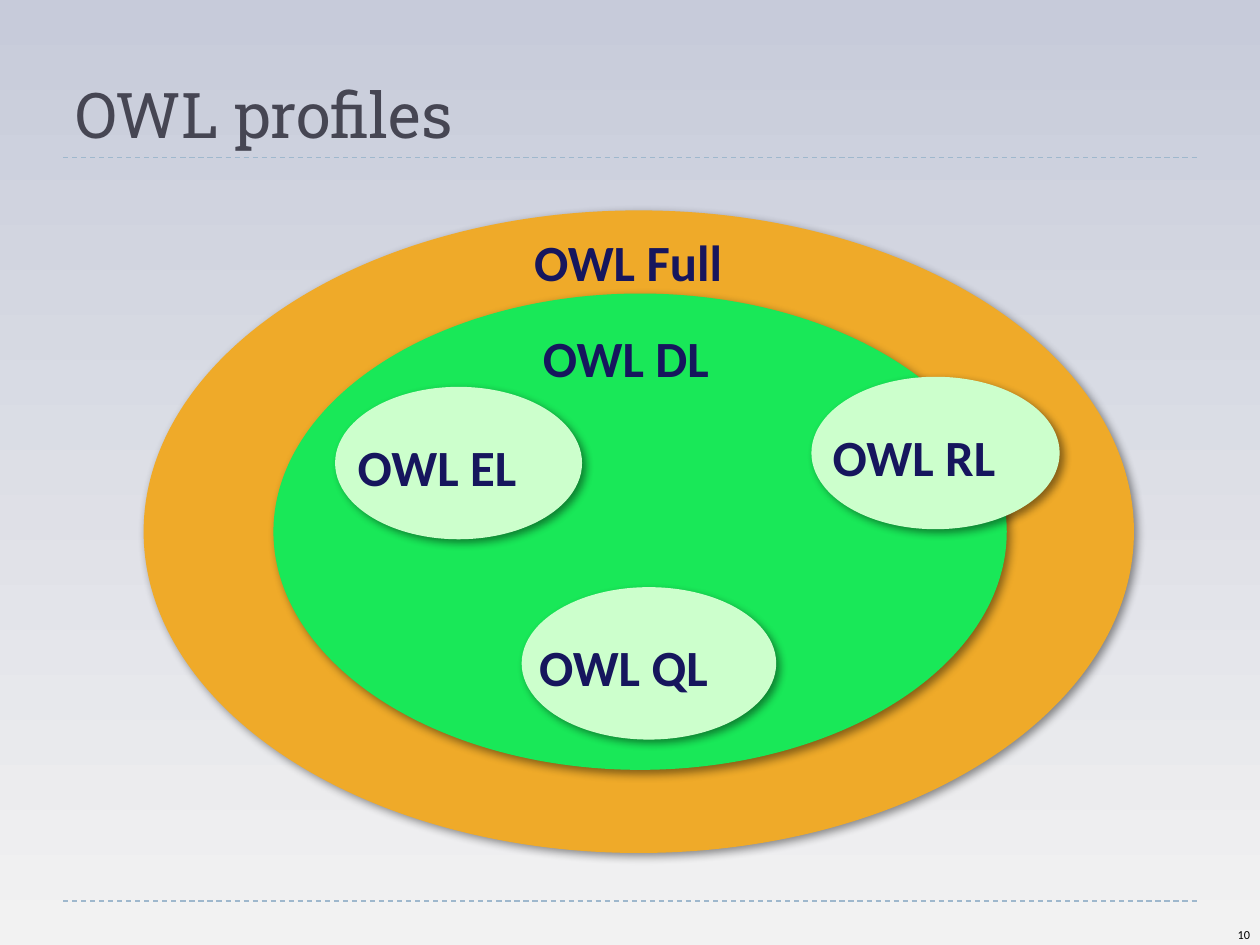
from lxml.etree import SubElement
from pptx import Presentation
from pptx.dml.color import RGBColor
from pptx.enum.dml import MSO_LINE
from pptx.enum.shapes import MSO_CONNECTOR, MSO_SHAPE
from pptx.enum.text import MSO_ANCHOR, MSO_AUTO_SIZE, PP_ALIGN
from pptx.oxml.ns import qn
from pptx.util import Pt

PX = 9144  # 100 px to the inch

PALE = RGBColor(0xF2, 0xF2, 0xF2)
MIST = RGBColor(0xC7, 0xCB, 0xDA)
RULE = RGBColor(0x9F, 0xB8, 0xCD)
SLATE = RGBColor(0x46, 0x46, 0x53)
NAVY = RGBColor(0x16, 0x16, 0x5D)
BLACK = RGBColor(0, 0, 0)
ORANGE = RGBColor(0xEF, 0xAA, 0x29)
GREEN = RGBColor(0x19, 0xE8, 0x58)
MINT = RGBColor(0xCC, 0xFF, 0xCC)


def emu(*nums):
    return [n * PX for n in nums]


def style(para, name, size, color, bold=False):
    for run in para.runs:
        font = run.font
        font.name, font.size, font.bold = name, Pt(size), bold
        font.color.rgb = color


def add_text(shapes, box, text, size, color, bold=False, align=PP_ALIGN.LEFT, wrap=True):
    frame = shapes.add_textbox(*emu(*box)).text_frame
    frame.word_wrap = wrap
    frame.text = text
    para = frame.paragraphs[0]
    para.alignment = align
    style(para, "Calibri", size, color, bold)


def add_shadow(shape):
    shape.shadow.inherit = False
    effects = shape._element.spPr.find(qn("a:effectLst"))
    outer = SubElement(effects, qn("a:outerShdw"), blurRad=str(Pt(5)),
                       dist=str(Pt(3)), dir="2700000", algn="tl", rotWithShape="0")
    black = SubElement(outer, qn("a:srgbClr"), val="000000")
    SubElement(black, qn("a:alpha"), val="43000")


def add_oval(shapes, box, color):
    oval = shapes.add_shape(MSO_SHAPE.OVAL, *emu(*box))
    oval.fill.solid()
    oval.fill.fore_color.rgb = color
    oval.line.fill.background()
    add_shadow(oval)


def add_rule(shapes, left, top, width):
    rule = shapes.add_connector(MSO_CONNECTOR.STRAIGHT, *emu(left, top, left + width, top))
    rule.line.color.rgb = RULE
    rule.line.width = Pt(0.75)
    rule.line.dash_style = MSO_LINE.DASH
    SubElement(rule._element.spPr, qn("a:effectLst"))


def add_frame(slide):
    """Background, rules and page number."""
    fill = slide.background.fill
    fill.gradient()
    fill.gradient_angle = 90
    for stop, color, place in zip(fill.gradient_stops, (PALE, MIST), (0, 1)):
        stop.color.rgb = color
        stop.position = place
    for top in (715, 125):
        add_rule(slide.shapes, 50, top, 900)
    add_text(slide.shapes, (972, 731, 30, 21), "10", 7, BLACK,
             align=PP_ALIGN.RIGHT, wrap=False)


def set_title(slide, box, text):
    title = slide.shapes.title
    title.left, title.top, title.width, title.height = emu(*box)
    frame = title.text_frame
    frame.text = text
    frame.auto_size = MSO_AUTO_SIZE.NONE
    frame.vertical_anchor = MSO_ANCHOR.BOTTOM
    para = frame.paragraphs[0]
    para.alignment = PP_ALIGN.LEFT
    style(para, "Roboto Slab", 36, SLATE)


def add_profiles(slide, left, top, width, height):
    """Nested ovals: the full language, its DL part and three profiles."""
    shapes = slide.shapes.add_group_shape().shapes

    def label(x, y, text):
        add_text(shapes, (left + x, top + y, 200, 59), text, 29, NAVY, bold=True)

    add_oval(shapes, (left, top, width, height), ORANGE)
    add_oval(shapes, (left + 103, top + 66, 582, 378), GREEN)
    label(300, 11, "OWL Full")
    label(307, 87, "OWL DL")
    for x, y, wide, inset, text in (
        (152, 140, 196, 8, "OWL EL"),
        (530, 132, 197, 7, "OWL RL"),
        (300, 299, 202, 4, "OWL QL"),
    ):
        add_oval(shapes, (left + x, top + y, wide, 121), MINT)
        label(x + inset, y + 34, text)


def main():
    deck = Presentation()
    deck.slide_width, deck.slide_height = emu(1000, 750)
    slide = deck.slides.add_slide(deck.slide_layouts[5])
    add_frame(slide)
    set_title(slide, (50, 17, 900, 108), "OWL profiles")
    add_profiles(slide, 114, 167, 786, 510)
    deck.save("out.pptx")


if __name__ == "__main__":
    main()
